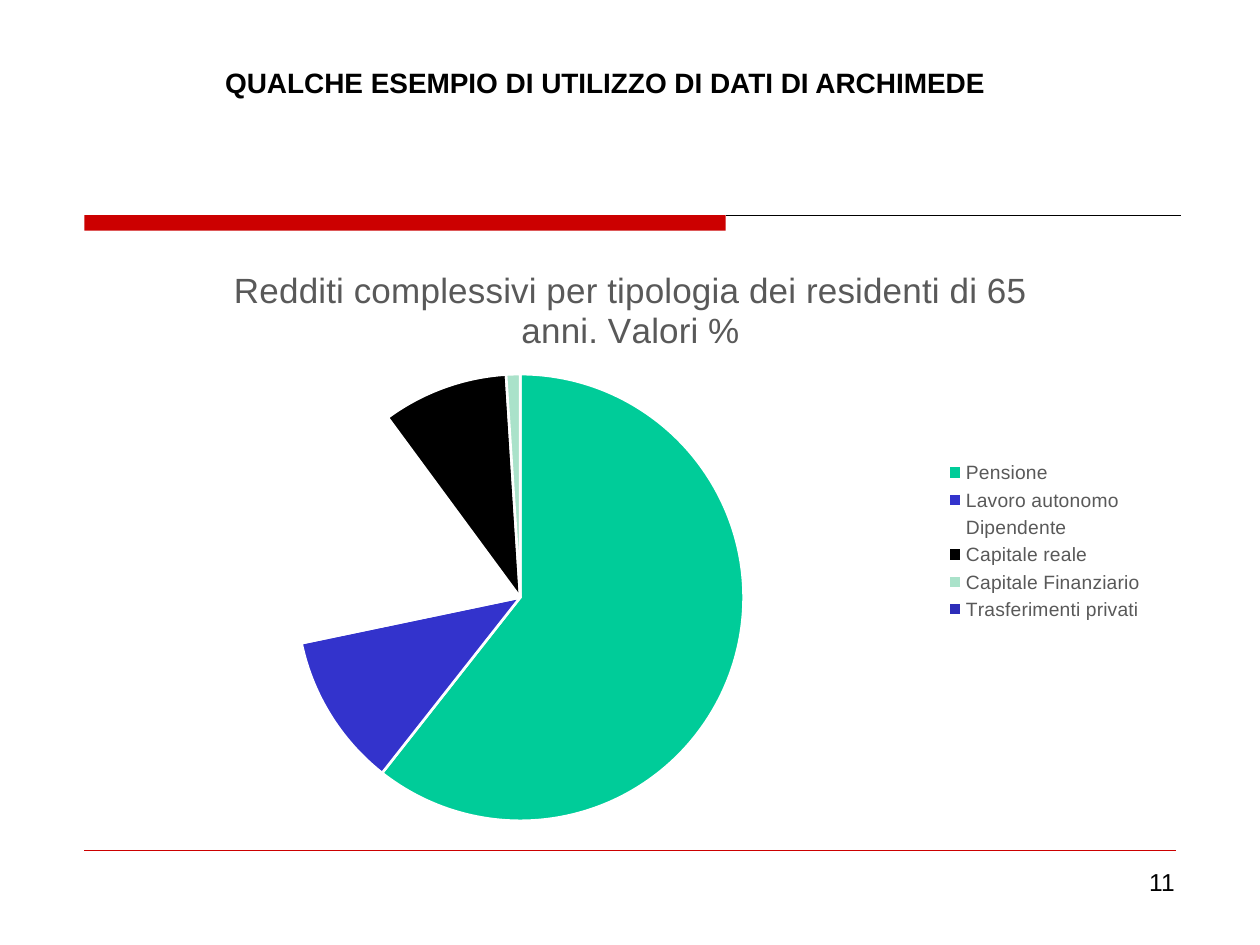
from dataclasses import dataclass

from lxml.etree import SubElement, fromstring
from pptx import Presentation
from pptx.chart.data import CategoryChartData
from pptx.dml.color import RGBColor
from pptx.enum.chart import XL_CHART_TYPE, XL_LEGEND_POSITION
from pptx.enum.shapes import MSO_CONNECTOR, MSO_SHAPE
from pptx.enum.text import PP_ALIGN
from pptx.oxml.ns import nsdecls, qn
from pptx.util import Cm, Pt

FACE = "Arial"
RED, BLACK, WHITE, GREY = "CC0000", "000000", "FFFFFF", "595959"


@dataclass
class Rule:
    left: float
    right: float
    top: float
    width: float
    hue: str


@dataclass
class Label:
    text: str
    box: tuple[float, float, float, float]
    size: int
    bold: bool = False
    wrap: bool = True
    align: PP_ALIGN = PP_ALIGN.LEFT


@dataclass
class Slice:
    name: str
    value: int
    hue: str


RULES = [
    Rule(14.63, 23.8, 4.34, 0.75, BLACK),
    Rule(1.7, 23.7, 17.15, 0.25, RED),
]
LABELS = [
    Label("QUALCHE ESEMPIO DI UTILIZZO DI DATI DI ARCHIMEDE",
          (4.29, 1.19, 16.03, 0.94), 16, bold=True, wrap=False),
    Label("11", (20.09, 17.35, 3.84, 1.32), 14, align=PP_ALIGN.RIGHT),
]
SLICES = [
    Slice("Pensione", 60, "00CC99"),
    Slice("Lavoro autonomo", 11, "3333CC"),
    Slice("Dipendente", 18, WHITE),
    Slice("Capitale reale", 9, BLACK),
    Slice("Capitale Finanziario", 1, "AAE2CA"),
    Slice("Trasferimenti privati", 0, "2D2DB9"),
]


def tint(hue: str) -> RGBColor:
    return RGBColor.from_string(hue)


def style(font, size: int, hue: str, bold: bool = False) -> None:
    font.name, font.size, font.bold = FACE, Pt(size), bold
    font.color.rgb = tint(hue)


def add_bar(slide) -> None:
    bar = slide.shapes.add_shape(
        MSO_SHAPE.RECTANGLE, Cm(1.7), Cm(4.34), Cm(12.93), Cm(0.31))
    bar.shadow.inherit = False
    bar.fill.solid()
    bar.fill.fore_color.rgb = tint(RED)
    bar.line.fill.background()


def add_rule(slide, rule: Rule) -> None:
    line = slide.shapes.add_connector(
        MSO_CONNECTOR.STRAIGHT, Cm(rule.left), Cm(rule.top),
        Cm(rule.right), Cm(rule.top))
    line.line.width = Pt(rule.width)
    line.line.color.rgb = tint(rule.hue)
    SubElement(line._element.spPr, qn("a:effectLst"))


def add_label(slide, label: Label) -> None:
    frame = slide.shapes.add_textbox(*map(Cm, label.box)).text_frame
    frame.word_wrap = label.wrap
    para = frame.paragraphs[0]
    para.alignment = label.align
    run = para.add_run()
    run.text = label.text
    style(run.font, label.size, BLACK, label.bold)


def add_pie(slide) -> None:
    data = CategoryChartData(number_format="0")
    data.categories = [part.name for part in SLICES]
    data.add_series("Series 1", [part.value for part in SLICES])
    chart = slide.shapes.add_chart(
        XL_CHART_TYPE.PIE, Cm(2.11), Cm(4.9), Cm(21.21), Cm(12.01), data).chart
    style(chart.font, 11, BLACK)

    # Heading and legend
    chart.has_title = True
    run = chart.chart_title.text_frame.paragraphs[0].add_run()
    run.text = "Redditi complessivi per tipologia dei residenti di 65 anni. Valori %"
    style(run.font, 20, GREY)
    chart.has_legend = True
    chart.legend.position = XL_LEGEND_POSITION.RIGHT
    chart.legend.include_in_layout = False
    style(chart.legend.font, 11, GREY)

    # Slices
    plot = chart.plots[0]
    plot.vary_by_categories = True
    for spot, part in enumerate(SLICES):
        form = plot.series[0].points[spot].format
        form.fill.solid()
        form.fill.fore_color.rgb = tint(part.hue)
        form.line.color.rgb = tint(WHITE)
        form.line.width = Pt(1.5)

    # Place of the pie inside the chart
    area = chart._chartSpace.chart.plotArea
    for old in area.findall(qn("c:layout")):
        area.remove(old)
    place = {"x": 0.18, "y": 0.22, "w": 0.43, "h": 0.75}
    modes = "".join(f'<c:{key}Mode val="edge"/>' for key in "xy")
    sizes = "".join(f'<c:{key} val="{val}"/>' for key, val in place.items())
    area.insert(0, fromstring(
        f'<c:layout {nsdecls("c")}><c:manualLayout><c:layoutTarget val="inner"/>'
        f"{modes}{sizes}</c:manualLayout></c:layout>"))


def main() -> None:
    deck = Presentation()
    deck.slide_width, deck.slide_height = Cm(25.4), Cm(19.05)
    slide = deck.slides.add_slide(deck.slide_layouts[6])

    # Frame of the page
    add_bar(slide)
    for rule in RULES:
        add_rule(slide, rule)

    # Heading and page number
    for label in LABELS:
        add_label(slide, label)

    # Incomes by type
    add_pie(slide)
    deck.save("out.pptx")


if __name__ == "__main__":
    main()
